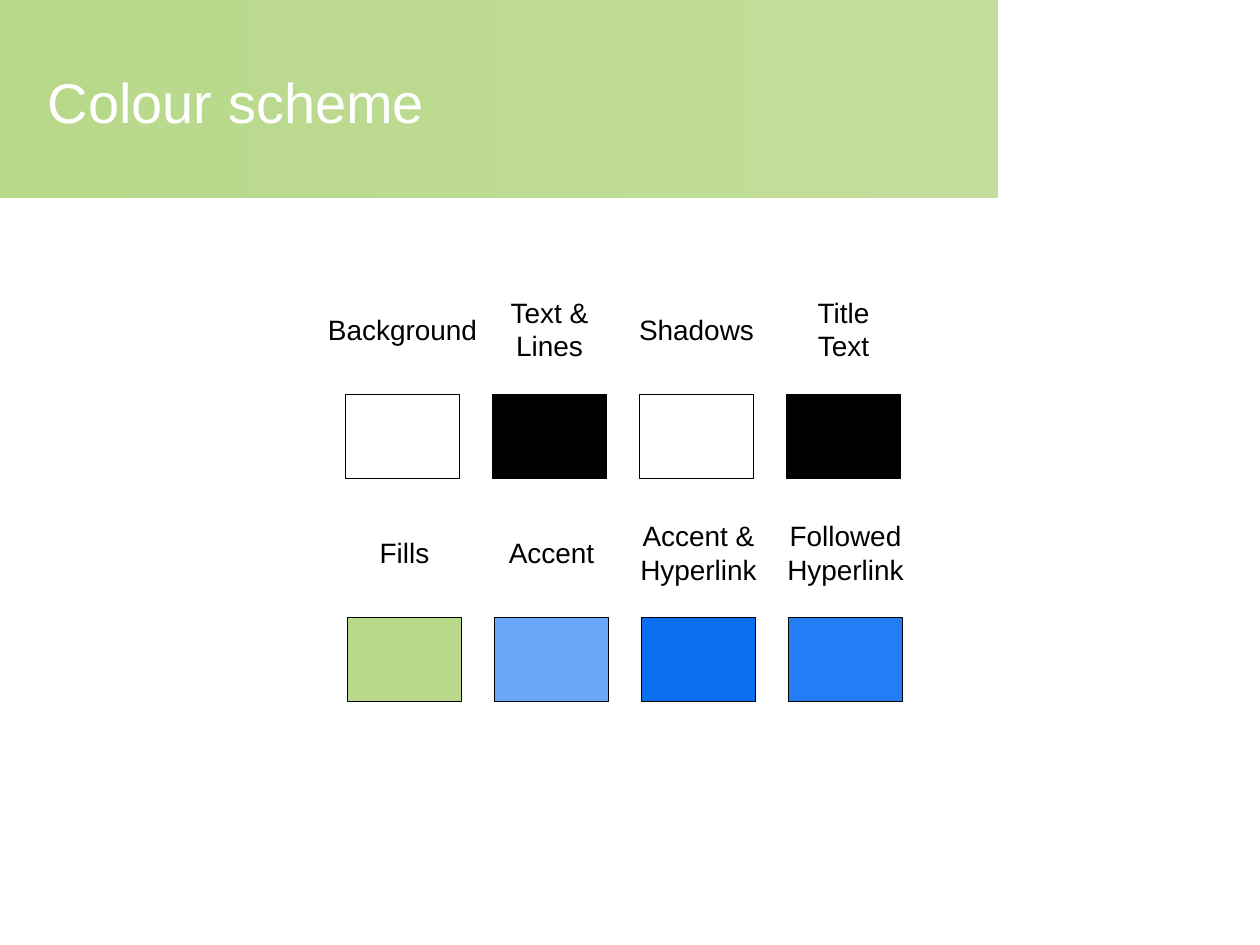
from pptx import Presentation
from pptx.dml.color import RGBColor
from pptx.enum import shapes, text
from pptx.util import Cm, Pt

INK = "000000"
PAPER = "FFFFFF"
GREEN = "B8D98A"
TOP = [("Background", 3.53, PAPER), ("Text &\nLines", 2.15, INK),
       ("Shadows", 2.85, PAPER), ("Title\vText", 1.62, INK)]
LOW = [("Fills", 1.52, GREEN), ("Accent", 2.26, "6BA7F8"),
       ("Accent &\nHyperlink", 2.95, "0B6DEF"),
       ("Followed\nHyperlink", 2.95, "237DF5")]


def hue(code):
    """Turn a hex string into a colour."""
    return RGBColor.from_string(code)


def block(slide, x, y, w, h):
    """Add a flat rectangle."""
    shape = slide.shapes.add_shape(
        shapes.MSO_SHAPE.RECTANGLE, Cm(x), Cm(y), Cm(w), Cm(h))
    shape.shadow.inherit = False
    return shape


def write(slide, x, y, w, h, words, size, code, align, wrap):
    """Add a text box with paragraphs split at newlines, lines at vertical tabs."""
    frame = slide.shapes.add_textbox(Cm(x), Cm(y), Cm(w), Cm(h)).text_frame
    frame.word_wrap = wrap
    frame.vertical_anchor = text.MSO_ANCHOR.MIDDLE
    for i, part in enumerate(words.split("\n")):
        para = frame.add_paragraph() if i else frame.paragraphs[0]
        para.alignment = align
        for j, line in enumerate(part.split("\v")):
            if j:
                para.add_line_break()
            run = para.add_run()
            run.text = line
            run.font.name = "Arial"
            run.font.size = Pt(size)
            run.font.color.rgb = hue(code)


def banner(slide, x, y, w, h):
    """Draw the green title band."""
    band = block(slide, x, y, w, h)
    band.fill.gradient()
    band.fill.gradient_angle = 0
    for stop, code in zip(band.fill.gradient_stops, (GREEN, "C2DE9A")):
        stop.color.rgb = hue(code)
    band.line.fill.background()
    write(slide, x + 0.71, y + 0.76, 19, 2.57, "Colour scheme", 32, PAPER,
          text.PP_ALIGN.LEFT, True)


def row(slide, x, y, w, h, items):
    """Draw equally spaced swatches with labels centred above them."""
    wide = 2.29
    step = (w - wide) / (len(items) - 1)
    for i, (name, span, code) in enumerate(items):
        left = x + i * step
        chip = block(slide, left, y, wide, h)
        chip.fill.solid()
        chip.fill.fore_color.rgb = hue(code)
        chip.line.color.rgb = hue(INK)
        chip.line.width = Pt(0.75)
        tall = 0.94 if len(name.splitlines()) == 1 else 1.63
        write(slide, left + (wide - span) / 2, y - 1.32 - tall / 2, span, tall,
              name, 16, INK, text.PP_ALIGN.CENTER, False)


def main():
    """Build the slide and save it."""
    deck = Presentation()
    deck.slide_width, deck.slide_height = Cm(25.4), Cm(19.05)
    slide = deck.slides.add_slide(deck.slide_layouts[6])
    banner(slide, 0, 0, 20.12, 4)
    row(slide, 6.97, 7.95, 11.18, 1.7, TOP)
    row(slide, 7.01, 12.45, 11.18, 1.7, LOW)
    deck.save("out.pptx")


if __name__ == "__main__":
    main()
